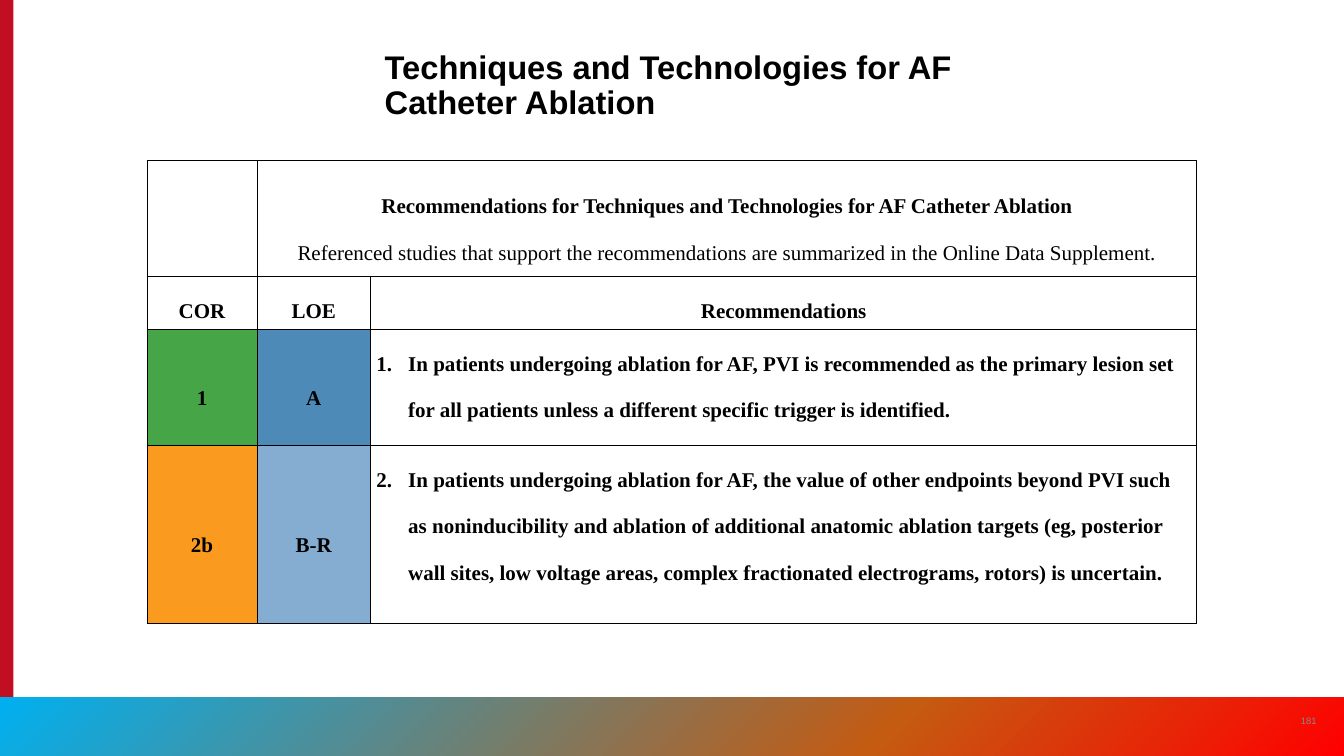
from lxml import etree
from pptx import Presentation
from pptx.dml.color import RGBColor
from pptx.enum.shapes import MSO_SHAPE
from pptx.enum.text import MSO_ANCHOR, MSO_AUTO_SIZE, PP_ALIGN
from pptx.oxml.ns import qn
from pptx.util import Inches, Pt

BLACK = RGBColor(0x00, 0x00, 0x00)
GREY = RGBColor(0x8A, 0x8B, 0x8A)
CRIMSON = RGBColor(0xC1, 0x0E, 0x21)
GREEN = RGBColor(0x45, 0xA5, 0x47)
BLUE = RGBColor(0x4E, 0x8A, 0xB7)
ORANGE = RGBColor(0xFA, 0x9B, 0x1F)
LIGHT_BLUE = RGBColor(0x85, 0xAD, 0xD1)
FOOTER_STOPS = [
    (0, RGBColor(0x00, 0xB0, 0xF0)),
    (66, RGBColor(0xC5, 0x5A, 0x11)),
    (100, RGBColor(0xFF, 0x00, 0x00)),
]

COLUMN_WIDTHS = [1.31, 1.35, 9.84]
ROW_HEIGHTS = [1.38, 0.63, 1.38, 2.12]
HEADINGS = ["COR", "LOE", "Recommendations"]
RECOMMENDATIONS = [
    ("1", GREEN, "A", BLUE,
     "In patients undergoing ablation for AF, PVI is recommended as the primary "
     "lesion set for all patients unless a different specific trigger is identified."),
    ("2b", ORANGE, "B-R", LIGHT_BLUE,
     "In patients undergoing ablation for AF, the value of other endpoints beyond PVI "
     "such as noninducibility and ablation of additional anatomic ablation targets "
     "(eg, posterior wall sites, low voltage areas, complex fractionated "
     "electrograms, rotors) is uncertain."),
]


def add_run(paragraph, text, color=BLACK, **font_values):
    run = paragraph.add_run()
    run.text = text
    for name, value in font_values.items():
        setattr(run.font, name, value)
    run.font.color.rgb = color


def add_bar(slide, left, top, width, height):
    bar = slide.shapes.add_shape(
        MSO_SHAPE.RECTANGLE, Inches(left), Inches(top), Inches(width), Inches(height))
    bar.shadow.inherit = False
    bar.line.fill.background()
    return bar


def add_side_band(slide, left, top, width, height):
    band = add_bar(slide, left, top, width, height)
    band.fill.solid()
    band.fill.fore_color.rgb = CRIMSON


def add_footer(slide, left, top, width, height):
    footer = add_bar(slide, left, top, width, height)
    footer.fill.gradient()
    footer.fill.gradient_angle = 315
    stop_list = footer.fill._fill._gradFill.find(qn("a:gsLst"))
    for stop in list(stop_list):
        stop_list.remove(stop)
    for position, color in FOOTER_STOPS:
        stop = etree.SubElement(stop_list, qn("a:gs"), pos=str(position * 1000))
        etree.SubElement(stop, qn("a:srgbClr"), val=str(color))

    # Page number at the right end
    page = slide.shapes.add_textbox(
        Inches(left + width - 0.66), Inches(top + 0.04), Inches(0.48), Inches(0.48))
    page.text_frame.word_wrap = True
    page.text_frame.vertical_anchor = MSO_ANCHOR.MIDDLE
    number = page.text_frame.paragraphs[0]
    number.alignment = PP_ALIGN.CENTER
    add_run(number, "181", GREY, size=Pt(8), name="Arial")


def add_title(slide, left, top, width, height):
    title = slide.shapes.title
    title.left, title.top = Inches(left), Inches(top)
    title.width, title.height = Inches(width), Inches(height)
    frame = title.text_frame
    frame.auto_size = MSO_AUTO_SIZE.NONE
    frame.word_wrap = True
    frame.vertical_anchor = MSO_ANCHOR.BOTTOM
    heading = frame.paragraphs[0]
    heading.alignment = PP_ALIGN.LEFT
    heading.line_spacing = 0.9
    add_run(heading, "Techniques and Technologies for AF Catheter Ablation",
            size=Pt(28), name="Arial", bold=True)


def style_cell(cell, color=None):
    properties = cell._tc.get_or_add_tcPr()
    for side in ("a:lnL", "a:lnR", "a:lnT", "a:lnB"):
        border = etree.SubElement(properties, qn(side), w=str(Pt(1)))
        fill = etree.SubElement(border, qn("a:solidFill"))
        etree.SubElement(fill, qn("a:srgbClr"), val=str(BLACK))
    if color is None:
        cell.fill.background()
    else:
        cell.fill.solid()
        cell.fill.fore_color.rgb = color
    margins = {"margin_left": 0.07, "margin_right": 0.07,
               "margin_top": 0, "margin_bottom": 0}
    for name, value in margins.items():
        setattr(cell, name, Inches(value))


def write_line(paragraph, text, bold=True, number=None):
    paragraph.line_spacing = 2.0
    if number is None:
        paragraph.alignment = PP_ALIGN.CENTER
    else:
        paragraph.alignment = PP_ALIGN.LEFT
        properties = paragraph._p.get_or_add_pPr()
        properties.set("marL", str(Inches(0.38)))
        properties.set("indent", str(Inches(-0.38)))
        etree.SubElement(properties, qn("a:buAutoNum"),
                         type="arabicPeriod", startAt=str(number))
    add_run(paragraph, text, size=Pt(18), name="Times New Roman", bold=bold)


def add_recommendations(slide, left, top, width, height):
    table = slide.shapes.add_table(
        len(ROW_HEIGHTS), len(COLUMN_WIDTHS),
        Inches(left), Inches(top), Inches(width), Inches(height)).table
    table.first_row = table.horz_banding = False
    for column, column_width in zip(table.columns, COLUMN_WIDTHS):
        column.width = Inches(column_width)
    for row, row_height in zip(table.rows, ROW_HEIGHTS):
        row.height = Inches(row_height)

    # Heading across the last two columns
    for column in range(len(COLUMN_WIDTHS)):
        style_cell(table.cell(0, column))
    banner = table.cell(0, 1)
    banner.merge(table.cell(0, 2))
    banner.vertical_anchor = MSO_ANCHOR.MIDDLE
    write_line(banner.text_frame.paragraphs[0],
               "Recommendations for Techniques and Technologies for AF Catheter Ablation")
    write_line(banner.text_frame.add_paragraph(),
               "Referenced studies that support the recommendations are summarized "
               "in the Online Data Supplement.", bold=False)

    # Column headings
    for column, heading in enumerate(HEADINGS):
        cell = table.cell(1, column)
        style_cell(cell)
        write_line(cell.text_frame.paragraphs[0], heading)

    # Graded, numbered recommendations
    for number, (cor, cor_color, loe, loe_color, advice) in enumerate(RECOMMENDATIONS, 1):
        row = number + 1
        for column, (grade, color) in enumerate([(cor, cor_color), (loe, loe_color)]):
            cell = table.cell(row, column)
            style_cell(cell, color)
            cell.vertical_anchor = MSO_ANCHOR.MIDDLE
            write_line(cell.text_frame.paragraphs[0], grade)
        advice_cell = table.cell(row, 2)
        style_cell(advice_cell)
        write_line(advice_cell.text_frame.paragraphs[0], advice, number=number)


def main():
    deck = Presentation()
    deck.slide_width, deck.slide_height = Inches(16), Inches(9)
    slide = deck.slides.add_slide(deck.slide_layouts[5])
    add_side_band(slide, 0, 0, 0.16, 9)
    add_footer(slide, 0, 8.3, 16, 0.7)
    add_title(slide, 4.48, 0.58, 7.05, 0.92)
    add_recommendations(slide, 1.75, 1.91, 12.5, 5.5)
    deck.save("out.pptx")


if __name__ == "__main__":
    main()
